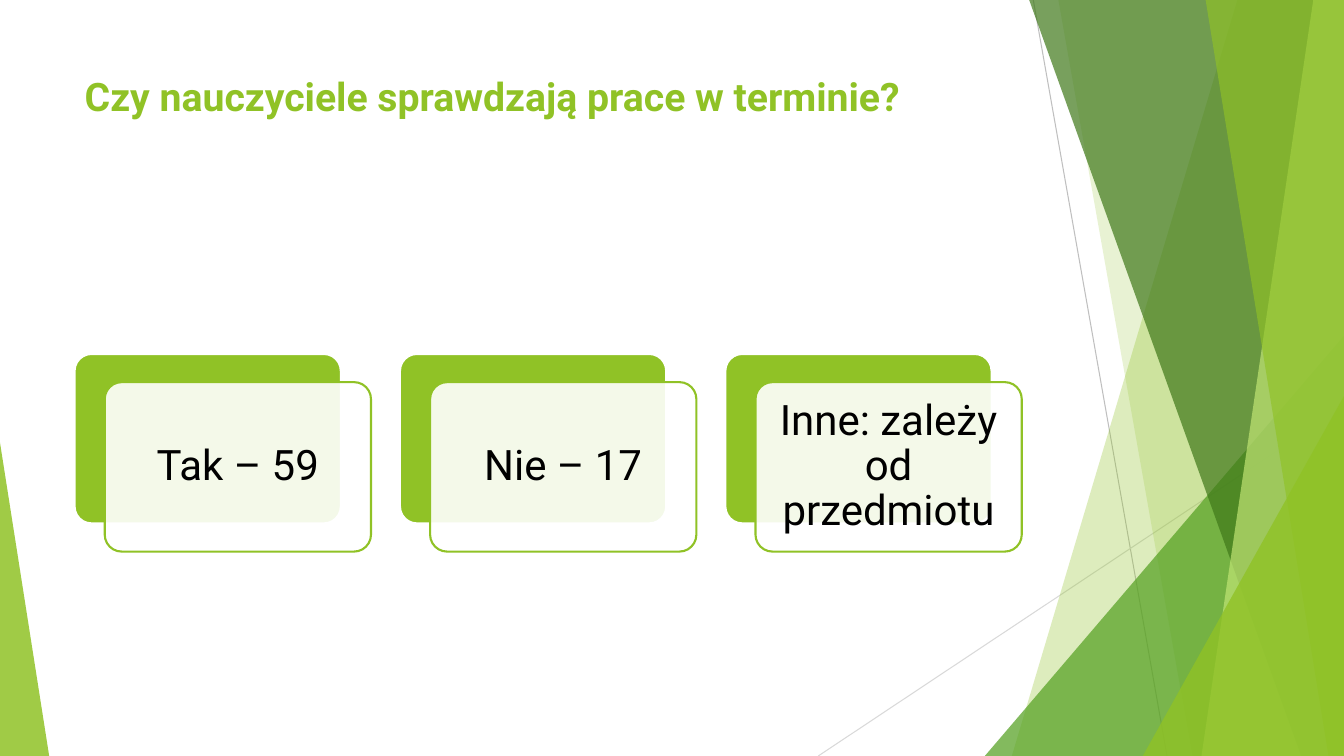
from lxml.etree import SubElement
from pptx import Presentation
from pptx.dml.color import RGBColor
from pptx.enum.shapes import MSO_CONNECTOR, MSO_SHAPE
from pptx.enum.text import MSO_ANCHOR, MSO_AUTO_SIZE, PP_ALIGN
from pptx.oxml.ns import qn
from pptx.util import Cm, Pt

WIDTH, HEIGHT, BLEED = 33.87, 19.05, -0.02
GREEN, WHITE, BLACK = "90C226", "FFFFFF", "000000"
TITLE = "Czy nauczyciele sprawdzają prace w terminie?"
ANSWERS = ["Tak – 59", "Nie – 17", "Inne: zależy od przedmiotu"]

RAYS = [((26.04, 0), (29.41, HEIGHT), "BFBFBF"),
        ((WIDTH, 10.24), (20.62, HEIGHT), "D9D9D9")]
BACK_BANDS = [(31.19, 25.5, GREEN, 30), (26.67, 30.05, GREEN, 20)]
FRONT_BANDS = [(25.93, 32.79, "3F7819", 70), (33.1, 30.28, "C0E474", 70),
               (30.38, 33.48, GREEN, 65)]
BACK_CORNERS = [(24.82, 8.46, WIDTH - 24.82, 1, "54A021", 72)]
FRONT_CORNERS = [(28.8, 9.98, WIDTH - 28.8, 1, GREEN, 80),
                 (0, 11.15, 1.24, 0, GREEN, 85)]

CARD_LEFT, CARD_TOP, CARD_PITCH = 1.88, 8.92, 8.2
CARD_WIDTH, CARD_HEIGHT = 6.71, 4.27
SHIFT_X, SHIFT_Y = 0.76, 0.71

TITLE_FONT = {"name": "Roboto", "size": Pt(28), "bold": True}
CARD_FONT = {"name": "Roboto", "size": Pt(30), "bold": False}
TITLE_BOX = {"left": Cm(1.88), "top": Cm(1.7), "width": Cm(23.88), "height": Cm(3.66)}
TITLE_FRAME = {"word_wrap": True, "auto_size": MSO_AUTO_SIZE.NONE,
               "vertical_anchor": MSO_ANCHOR.TOP}
CARD_FRAME = {"word_wrap": True, "vertical_anchor": MSO_ANCHOR.MIDDLE,
              "margin_left": Cm(0.3), "margin_right": Cm(0.3),
              "margin_top": Cm(0.3), "margin_bottom": Cm(0.3)}
TITLE_PARAGRAPH = {"alignment": PP_ALIGN.LEFT, "line_spacing": 1.0}
CARD_PARAGRAPH = {"alignment": PP_ALIGN.CENTER, "line_spacing": 0.9}


def rgb(value):
    return RGBColor.from_string(value)


def apply(obj, values):
    for name, value in values.items():
        setattr(obj, name, value)


def paint(sp, fill, opacity=100, line=None):
    sp.shadow.inherit = False
    sp.fill.solid()
    sp.fill.fore_color.rgb = rgb(fill)
    if opacity < 100:
        color = sp.fill._xPr.find(qn("a:solidFill"))[0]
        SubElement(color, qn("a:alpha"), val=str(opacity * 1000))
    if line:
        sp.line.color.rgb = rgb(line)
        sp.line.width = Pt(1.5)
    else:
        sp.line.fill.background()


def write(tf, text, frame, paragraph, font, color):
    apply(tf, frame)
    p = tf.paragraphs[0]
    apply(p, paragraph)
    r = p.add_run()
    r.text = text
    apply(r.font, font)
    r.font.color.rgb = rgb(color)


def add_ray(shapes, start, end, color):
    line = shapes.add_connector(MSO_CONNECTOR.STRAIGHT, *map(Cm, start + end))
    line.line.color.rgb = rgb(color)
    line.line.width = Pt(0.75)
    SubElement(line._element.spPr, qn("a:effectLst"))


def add_band(shapes, top_x, bottom_x, color, opacity):
    builder = shapes.build_freeform(Cm(top_x), Cm(BLEED))
    corners = [(WIDTH, BLEED), (WIDTH, HEIGHT), (bottom_x, HEIGHT)]
    builder.add_line_segments([(Cm(x), Cm(y)) for x, y in corners], close=True)
    paint(builder.convert_to_shape(), color, opacity)


def add_corner(shapes, left, top, width, apex, color, opacity):
    sp = shapes.add_shape(MSO_SHAPE.ISOSCELES_TRIANGLE, Cm(left), Cm(top),
                          Cm(width), Cm(HEIGHT - top))
    sp.adjustments[0] = apex
    paint(sp, color, opacity)


def add_panel(shapes, left, top, fill, opacity, line):
    sp = shapes.add_shape(MSO_SHAPE.ROUNDED_RECTANGLE, Cm(left), Cm(top),
                          Cm(CARD_WIDTH), Cm(CARD_HEIGHT))
    sp.adjustments[0] = 0.1
    paint(sp, fill, opacity, line)
    return sp


def add_card(shapes, left, text):
    add_panel(shapes, left, CARD_TOP, GREEN, 100, WHITE)
    front = add_panel(shapes, left + SHIFT_X, CARD_TOP + SHIFT_Y, WHITE, 90, GREEN)
    write(front.text_frame, text, CARD_FRAME, CARD_PARAGRAPH, CARD_FONT, BLACK)


def add_decoration(shapes):
    for ray in RAYS:
        add_ray(shapes, *ray)
    for bands, corners in ((BACK_BANDS, BACK_CORNERS), (FRONT_BANDS, FRONT_CORNERS)):
        for band in bands:
            add_band(shapes, *band)
        for corner in corners:
            add_corner(shapes, *corner)


def main():
    prs = Presentation()
    prs.slide_width, prs.slide_height = Cm(WIDTH), Cm(HEIGHT)
    shapes = prs.slides.add_slide(prs.slide_layouts[5]).shapes
    apply(shapes.title, TITLE_BOX)
    write(shapes.title.text_frame, TITLE, TITLE_FRAME, TITLE_PARAGRAPH, TITLE_FONT, GREEN)
    add_decoration(shapes)
    for i, answer in enumerate(ANSWERS):
        add_card(shapes, CARD_LEFT + i * CARD_PITCH, answer)
    prs.save("out.pptx")


if __name__ == "__main__":
    main()
